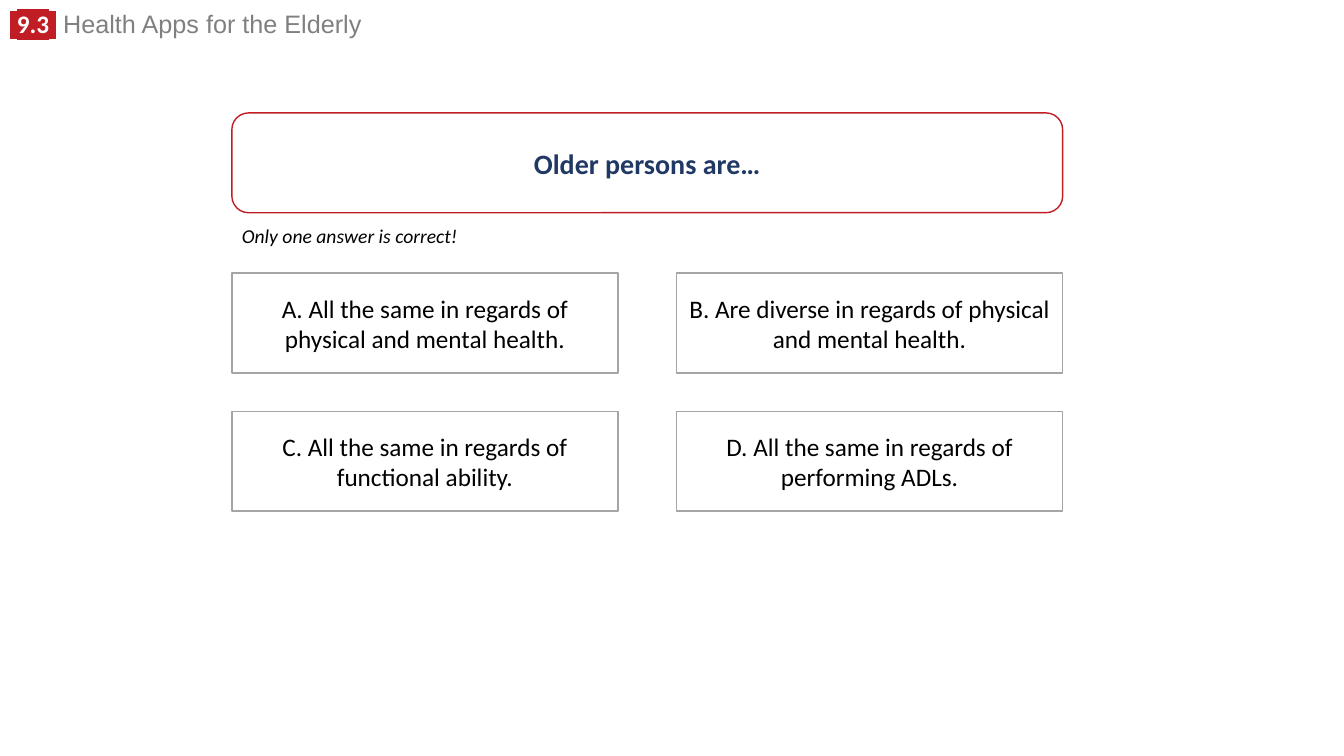
from lxml import etree
from pptx import Presentation
from pptx.dml.color import RGBColor
from pptx.enum.shapes import MSO_SHAPE
from pptx.enum.text import MSO_ANCHOR, MSO_AUTO_SIZE, PP_ALIGN
from pptx.oxml.ns import qn
from pptx.util import Inches, Pt

RECTANGLE = MSO_SHAPE.RECTANGLE
ROUNDED_RECTANGLE = MSO_SHAPE.ROUNDED_RECTANGLE
MIDDLE = MSO_ANCHOR.MIDDLE
CENTER = PP_ALIGN.CENTER
FIT_SHAPE = MSO_AUTO_SIZE.SHAPE_TO_FIT_TEXT

WHITE = RGBColor(0xFF, 0xFF, 0xFF)
BLACK = RGBColor(0x00, 0x00, 0x00)
RED = RGBColor(0xC0, 0x1E, 0x24)
NAVY = RGBColor(0x20, 0x38, 0x64)
GRAY = RGBColor(0x80, 0x80, 0x80)
BORDER_GRAY = RGBColor(0xA5, 0xA5, 0xA5)

SLIDE_WIDTH, SLIDE_HEIGHT = 13.33, 7.5
GRID_LEFT, QUESTION_TOP, ANSWERS_TOP = 2.3, 1.12, 2.71
COLUMN_WIDTH, COLUMN_STEP = 3.83, 4.41
ROW_HEIGHT, ROW_STEP = 0.99, 1.37

BADGE = {"name": "Arial", "size": Pt(18), "bold": True, "color": WHITE}
BADGE_NUMBER = {**BADGE, "name": "Calibri"}
HEADING = {**BADGE, "bold": False, "color": GRAY}
QUESTION = {"name": "Calibri", "size": Pt(20), "bold": True, "color": NAVY}
ANSWER = {"name": "Calibri", "size": Pt(18), "color": BLACK}
HINT = {"name": "Calibri", "size": Pt(14), "italic": True, "color": BLACK}

ANSWERS = [
    ["A. All the same in regards of physical and mental health.",
     "B. Are diverse in regards of physical and mental health."],
    ["C. All the same in regards of functional ability.",
     "D. All the same in regards of performing ADLs."],
]


def add_run(paragraph, text, style, highlight=None):
    run = paragraph.add_run()
    run.text = text
    for attribute, value in style.items():
        if attribute == "color":
            run.font.color.rgb = value
        else:
            setattr(run.font, attribute, value)
    if highlight is not None:
        mark = etree.Element(qn("a:highlight"))
        etree.SubElement(mark, qn("a:srgbClr"), val=str(highlight))
        run.font._element.find(qn("a:solidFill")).addnext(mark)


def add_text_box(slide, left, top, width, height, wrap=True):
    box = slide.shapes.add_textbox(*map(Inches, (left, top, width, height)))
    box.text_frame.word_wrap = wrap
    box.text_frame.auto_size = FIT_SHAPE
    return box.text_frame.paragraphs[0]


def add_card(slide, kind, left, top, width, text, style, border):
    shape = slide.shapes.add_shape(
        kind, *map(Inches, (left, top, width, ROW_HEIGHT)))
    shape.shadow.inherit = False
    shape.fill.solid()
    shape.fill.fore_color.rgb = WHITE
    shape.line.color.rgb = border
    shape.line.width = Pt(1)
    shape.text_frame.word_wrap = True
    shape.text_frame.vertical_anchor = MIDDLE
    paragraph = shape.text_frame.paragraphs[0]
    paragraph.alignment = CENTER
    add_run(paragraph, text, style)


def add_header(slide):
    paragraph = add_text_box(slide, 0, 0.09, 9.52, 0.35)
    paragraph.line_spacing = 0.8
    add_run(paragraph, " ", BADGE, RED)
    add_run(paragraph, "9.3", BADGE_NUMBER, RED)
    add_run(paragraph, " ", BADGE, RED)
    add_run(paragraph, " Health Apps for the Elderly", HEADING)


def add_answers(slide):
    for row, answers in enumerate(ANSWERS):
        for column, answer in enumerate(answers):
            add_card(slide, RECTANGLE, GRID_LEFT + column * COLUMN_STEP,
                     ANSWERS_TOP + row * ROW_STEP, COLUMN_WIDTH,
                     answer, ANSWER, BORDER_GRAY)


def main():
    presentation = Presentation()
    presentation.slide_width = Inches(SLIDE_WIDTH)
    presentation.slide_height = Inches(SLIDE_HEIGHT)
    slide = presentation.slides.add_slide(presentation.slide_layouts[6])
    add_header(slide)
    add_card(slide, ROUNDED_RECTANGLE, GRID_LEFT, QUESTION_TOP,
             COLUMN_STEP + COLUMN_WIDTH, "Older persons are…", QUESTION, RED)
    hint = add_text_box(slide, GRID_LEFT, 2.17, 2.36, 0.34, wrap=False)
    add_run(hint, "Only one answer is correct!", HINT)
    add_answers(slide)
    presentation.save("out.pptx")


if __name__ == "__main__":
    main()
